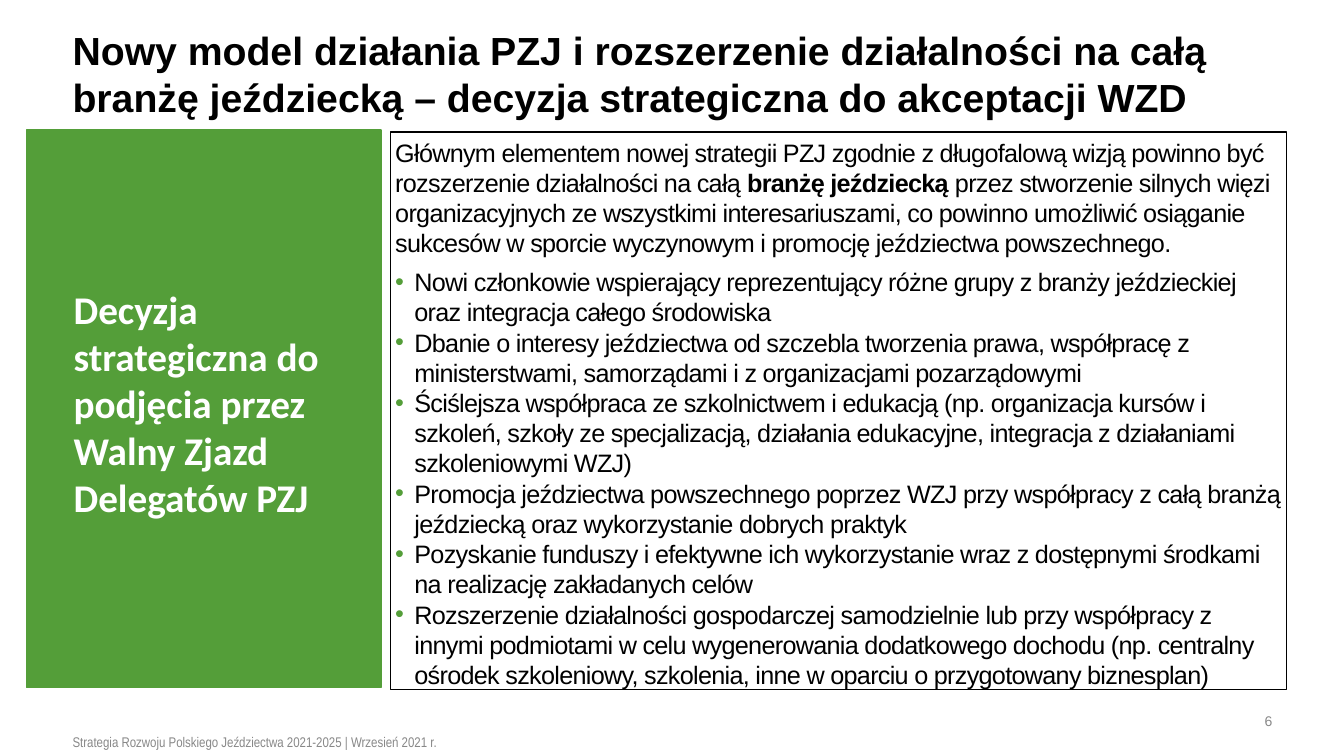
from pptx import Presentation
from pptx.dml.color import RGBColor
from pptx.enum.shapes import MSO_SHAPE
from pptx.enum.text import MSO_ANCHOR, PP_ALIGN
from pptx.oxml.ns import qn
from pptx.util import Inches, Pt
from lxml import etree

RECT = MSO_SHAPE.RECTANGLE
TOP, MIDDLE = MSO_ANCHOR.TOP, MSO_ANCHOR.MIDDLE
LEFT, RIGHT = PP_ALIGN.LEFT, PP_ALIGN.RIGHT

# Content
TITLE = ("Nowy model działania PZJ i rozszerzenie działalności na całą branżę "
         "jeździecką – decyzja strategiczna do akceptacji WZD")
DECISION = "Decyzja strategiczna do podjęcia przez Walny Zjazd Delegatów PZJ"
INTRO = [
    ("Głównym elementem nowej strategii PZJ zgodnie z długofalową wizją powinno być "
     "rozszerzenie działalności na całą ", False),
    ("branżę jeździecką ", True),
    ("przez stworzenie silnych więzi organizacyjnych ze wszystkimi interesariuszami, "
     "co powinno umożliwić osiąganie sukcesów w sporcie wyczynowym i promocję "
     "jeździectwa powszechnego.", False),
]
BULLETS = [
    "Nowi członkowie wspierający reprezentujący różne grupy z branży jeździeckiej "
    "oraz integracja całego środowiska",
    "Dbanie o interesy jeździectwa od szczebla tworzenia prawa, współpracę z "
    "ministerstwami, samorządami i z organizacjami pozarządowymi",
    "Ściślejsza współpraca ze szkolnictwem i edukacją (np. organizacja kursów i "
    "szkoleń, szkoły ze specjalizacją, działania edukacyjne, integracja z działaniami "
    "szkoleniowymi WZJ)",
    "Promocja jeździectwa powszechnego poprzez WZJ przy współpracy z całą branżą "
    "jeździecką oraz wykorzystanie dobrych praktyk",
    "Pozyskanie funduszy i efektywne ich wykorzystanie wraz z dostępnymi środkami "
    "na realizację zakładanych celów",
    "Rozszerzenie działalności gospodarczej samodzielnie lub przy współpracy z innymi "
    "podmiotami w celu wygenerowania dodatkowego dochodu (np. centralny ośrodek "
    "szkoleniowy, szkolenia, inne w oparciu o przygotowany biznesplan)",
]
FOOTER = "Strategia Rozwoju Polskiego Jeździectwa 2021-2025 | Wrzesień 2021 r."
PAGE = "6"


class Theme:
    green = "549E39"
    black = "000000"
    white = "FFFFFF"
    grey = "888888"
    font, side_font, footer_font = "Arial", "Calibri", "Arial Narrow"
    heading, body, small = 28, 18, 10
    leading = 1.2
    tracking = -0.5
    inset = 0.05
    indent = 0.19


def rgb(color):
    return RGBColor.from_string(color)


def set_frame(tf, anchor=TOP, wrap=True):
    tf.word_wrap = wrap
    tf.vertical_anchor = anchor
    tf.margin_left = tf.margin_right = Inches(Theme.inset)
    tf.margin_top = tf.margin_bottom = Inches(Theme.inset)


def add_run(p, text, size, color, font=Theme.font, bold=False, tracking=0):
    r = p.add_run()
    r.text = text
    r.font.name, r.font.size, r.font.bold = font, Pt(size), bold
    r.font.color.rgb = rgb(color)
    if tracking:
        r.font._element.set("spc", str(int(tracking * 100)))


def set_paragraph(p, size, align=LEFT, after=0):
    p.alignment = align
    p.line_spacing = Pt(size * Theme.leading)
    p.space_before, p.space_after = Pt(0), Pt(after)


def add_bullet(p):
    pPr = p._p.get_or_add_pPr()
    pPr.set("marL", str(Inches(Theme.indent)))
    pPr.set("indent", str(-Inches(Theme.indent)))
    color = etree.SubElement(pPr, qn("a:buClr"))
    etree.SubElement(color, qn("a:srgbClr"), val=Theme.green)
    etree.SubElement(pPr, qn("a:buFont"), typeface=Theme.font)
    etree.SubElement(pPr, qn("a:buChar"), char="•")


def add_panel(s, box, line, width, fill=None):
    sp = s.shapes.add_shape(RECT, *map(Inches, box))
    sp.shadow.inherit = False
    if fill:
        sp.fill.solid()
        sp.fill.fore_color.rgb = rgb(fill)
    else:
        sp.fill.background()
    sp.line.color.rgb = rgb(line)
    sp.line.width = Pt(width)
    return sp


def add_label(s, box, text, size, color, font, bold=False, anchor=MIDDLE,
              align=LEFT, wrap=True):
    tf = s.shapes.add_textbox(*map(Inches, box)).text_frame
    set_frame(tf, anchor, wrap)
    p = tf.paragraphs[0]
    set_paragraph(p, size, align)
    add_run(p, text, size, color, font, bold)


def main():
    prs = Presentation()
    prs.slide_width, prs.slide_height = Inches(13.33), Inches(7.5)
    s = prs.slides.add_slide(prs.slide_layouts[5])

    # Title
    title = s.shapes.title
    title.left, title.top = Inches(0.67), Inches(0.3)
    title.width, title.height = Inches(12), Inches(0.85)
    set_frame(title.text_frame, MIDDLE)
    p = title.text_frame.paragraphs[0]
    set_paragraph(p, Theme.heading)
    add_run(p, TITLE, Theme.heading, Theme.black, bold=True)

    # Green decision panel
    add_panel(s, (0.26, 1.29, 3.52, 5.53), Theme.green, 0.85, Theme.green)
    add_label(s, (0.68, 2.78, 2.98, 2.46), DECISION, Theme.heading, Theme.white,
              Theme.side_font, bold=True, anchor=TOP)

    # Framed strategy text
    tf = add_panel(s, (3.87, 1.31, 8.89, 5.53), Theme.black, 1).text_frame
    set_frame(tf)
    p = tf.paragraphs[0]
    set_paragraph(p, Theme.body, after=6)
    for text, bold in INTRO:
        add_run(p, text, Theme.body, Theme.black, bold=bold, tracking=Theme.tracking)
    for text in BULLETS:
        p = tf.add_paragraph()
        set_paragraph(p, Theme.body)
        add_bullet(p)
        add_run(p, text, Theme.body, Theme.black, tracking=Theme.tracking)

    # Page number and footer
    add_label(s, (12.4, 7.03, 0.27, 0.25), PAGE, Theme.small, Theme.grey,
              Theme.font, align=RIGHT, wrap=False)
    add_label(s, (0.67, 7.23, 8.66, 0.27), FOOTER, Theme.small, Theme.grey,
              Theme.footer_font)

    prs.save("out.pptx")


if __name__ == "__main__":
    main()
